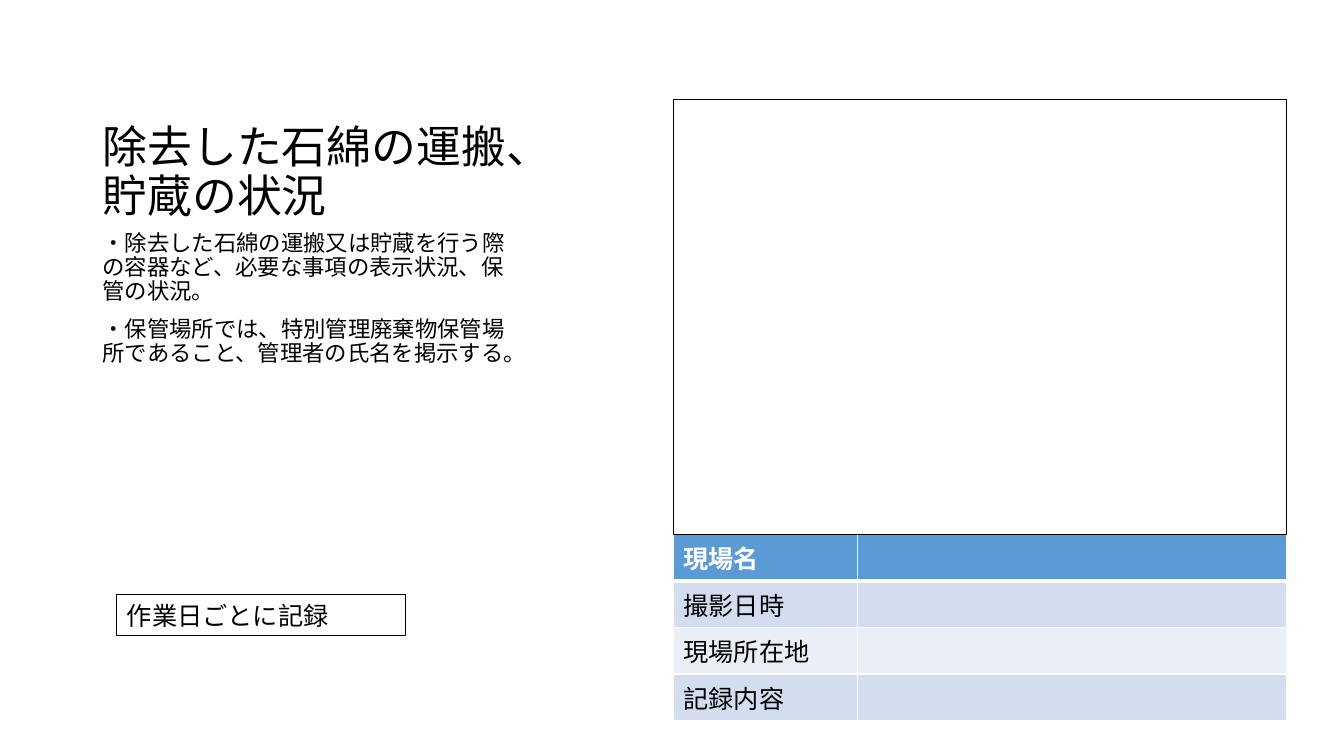
from dataclasses import dataclass

from lxml import etree
from pptx import Presentation
from pptx.dml.color import RGBColor
from pptx.enum.shapes import MSO_SHAPE
from pptx.enum.text import MSO_ANCHOR, PP_ALIGN
from pptx.oxml.ns import qn
from pptx.util import Inches, Pt

RECTANGLE = MSO_SHAPE.RECTANGLE
TOP, MIDDLE, BOTTOM = MSO_ANCHOR.TOP, MSO_ANCHOR.MIDDLE, MSO_ANCHOR.BOTTOM
LEFT = PP_ALIGN.LEFT

FONT = "Noto Sans CJK JP"
BLACK, WHITE = "000000", "FFFFFF"
HEADER_BLUE, DARK_BAND, LIGHT_BAND = "5B9BD5", "D2DEEF", "EAEFF7"
SLIDE_WIDTH, SLIDE_HEIGHT = Inches(13.33), Inches(7.5)


@dataclass(frozen=True)
class Area:
    """A rectangle in percent of the slide's width and height."""
    left: float
    top: float
    width: float
    height: float

    def emu(self) -> tuple[int, int, int, int]:
        return (across(self.left), down(self.top),
                across(self.width), down(self.height))


@dataclass(frozen=True)
class RecordRow:
    label: str
    fill: str
    color: str = BLACK
    bold: bool = False
    rule_below: float = 1


def across(percent: float) -> int:
    return round(SLIDE_WIDTH * percent / 100)


def down(percent: float) -> int:
    return round(SLIDE_HEIGHT * percent / 100)


def rgb(color: str) -> RGBColor:
    return RGBColor.from_string(color)


def write(frame, *paragraphs: str, size: float = 18, color: str = BLACK,
          bold: bool = False, anchor=TOP, line_spacing: float = 1,
          space_before: float = 0) -> None:
    frame.word_wrap = True
    frame.vertical_anchor = anchor
    for index, wording in enumerate(paragraphs):
        paragraph = frame.paragraphs[0] if index == 0 else frame.add_paragraph()
        paragraph.alignment = LEFT
        paragraph.line_spacing = line_spacing
        paragraph.space_before = Pt(space_before)
        run = paragraph.add_run()
        run.text = wording
        run.font.size = Pt(size)
        run.font.bold = bold
        run.font.name = FONT
        run.font.color.rgb = rgb(color)
        east_asian = etree.Element(qn("a:ea"), typeface=FONT)
        run.font._element.find(qn("a:latin")).addnext(east_asian)


def add_text(slide, area: Area, *paragraphs: str, **text_format) -> None:
    write(slide.shapes.add_textbox(*area.emu()).text_frame,
          *paragraphs, **text_format)


def add_outline(slide, area: Area, line_width: float):
    outline = slide.shapes.add_shape(RECTANGLE, *area.emu())
    outline.shadow.inherit = False
    outline.fill.background()
    outline.line.color.rgb = rgb(BLACK)
    outline.line.width = Pt(line_width)
    return outline


def set_borders(cell, above: float, below: float) -> None:
    properties = cell._tc.get_or_add_tcPr()
    for side, width in (("L", 1), ("R", 1), ("T", above), ("B", below)):
        border = etree.SubElement(properties, qn(f"a:ln{side}"), w=str(Pt(width)))
        fill = etree.SubElement(border, qn("a:solidFill"))
        etree.SubElement(fill, qn("a:srgbClr"), val=WHITE)


def add_record_table(slide, area: Area, rows: list[RecordRow],
                     column_shares: tuple[float, ...]) -> None:
    table = slide.shapes.add_table(len(rows), len(column_shares),
                                   *area.emu()).table
    for column, share in zip(table.columns, column_shares):
        column.width = across(area.width * share)
    rule_above = 1
    for index, record in enumerate(rows):
        table.rows[index].height = down(area.height / len(rows))
        for cell in table.rows[index].cells:
            set_borders(cell, rule_above, record.rule_below)
            cell.fill.solid()
            cell.fill.fore_color.rgb = rgb(record.fill)
        write(table.cell(index, 0).text_frame, record.label,
              color=record.color, bold=record.bold)
        rule_above = record.rule_below


def main() -> None:
    deck = Presentation()
    deck.slide_width, deck.slide_height = SLIDE_WIDTH, SLIDE_HEIGHT
    slide = deck.slides.add_slide(deck.slide_layouts[6])

    # Heading and explanation
    add_text(slide, Area(6.9, 6.67, 32.26, 23.33),
             "除去した石綿の運搬、貯蔵の状況",
             size=32, anchor=BOTTOM, line_spacing=0.9)
    add_text(slide, Area(6.9, 30, 32.26, 55.6),
             "・除去した石綿の運搬又は貯蔵を行う際の容器など、必要な事項の表示状況、保管の状況。",
             "・保管場所では、特別管理廃棄物保管場所であること、管理者の氏名を掲示する。",
             size=16, line_spacing=0.9, space_before=10)

    # Site record table
    photo_area = Area(50.11, 13.2, 45.6, 57.47)
    record_area = Area(photo_area.left, photo_area.top + photo_area.height,
                       photo_area.width, 24.67)
    add_record_table(slide, record_area, [
        RecordRow("現場名", HEADER_BLUE, WHITE, bold=True, rule_below=3),
        RecordRow("撮影日時", DARK_BAND),
        RecordRow("現場所在地", LIGHT_BAND),
        RecordRow("記録内容", DARK_BAND),
    ], column_shares=(0.3, 0.7))

    # Empty photo frame above the table
    add_outline(slide, photo_area, 1)

    # Recording frequency
    frequency = add_outline(slide, Area(8.7, 78.67, 21.45, 5.38), 0.75)
    write(frequency.text_frame, "作業日ごとに記録", anchor=MIDDLE)

    deck.save("out.pptx")


if __name__ == "__main__":
    main()
